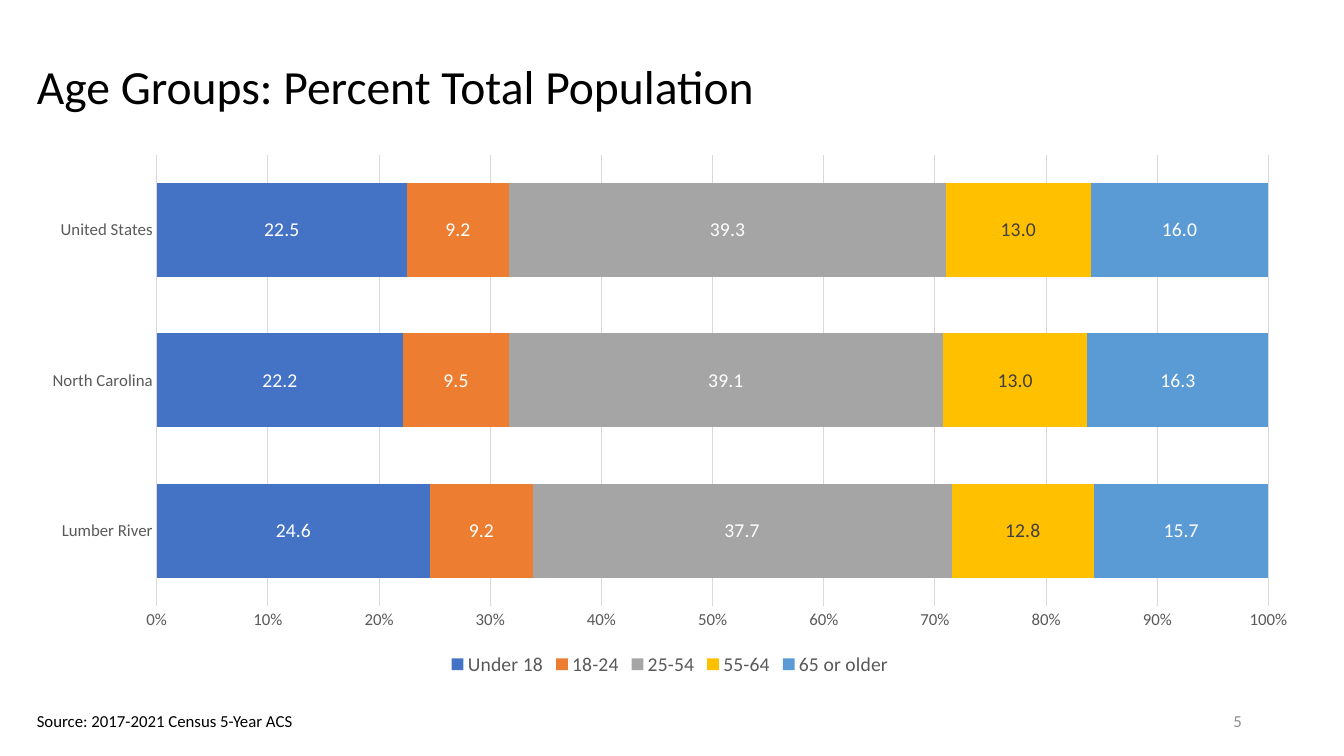
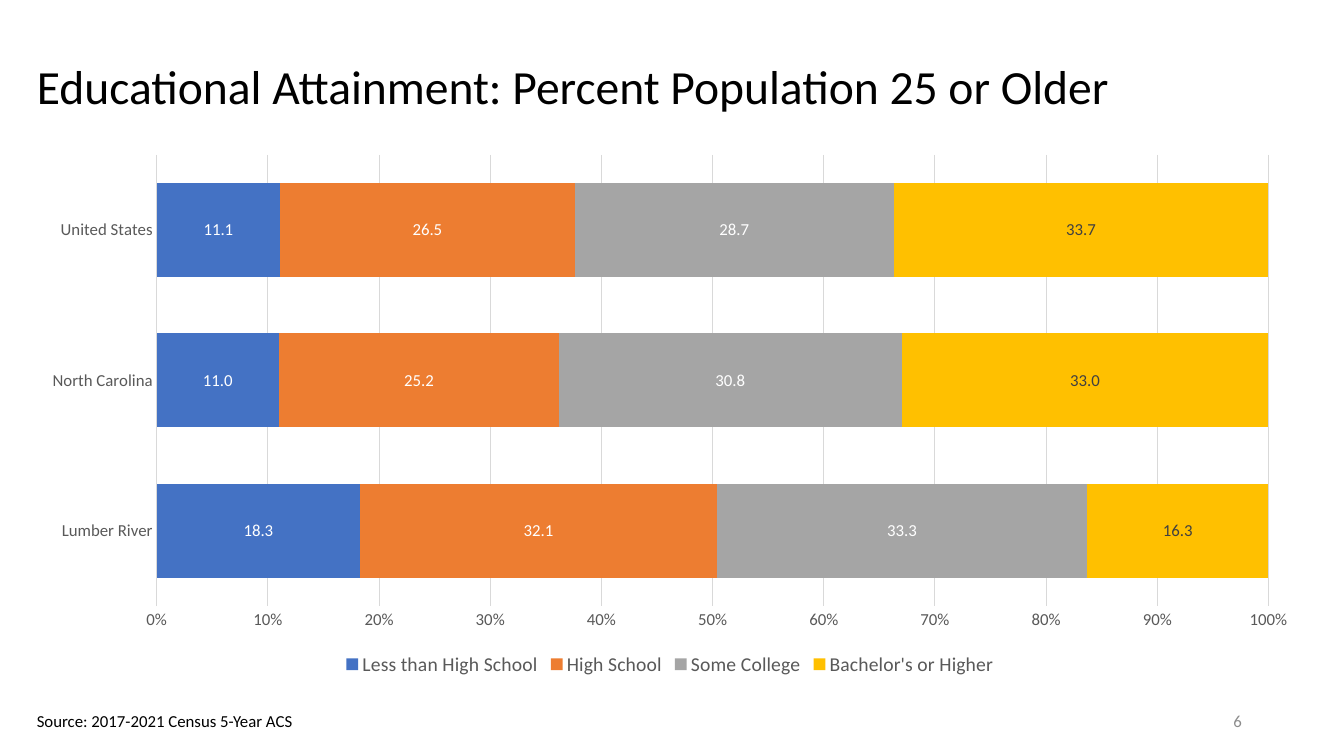
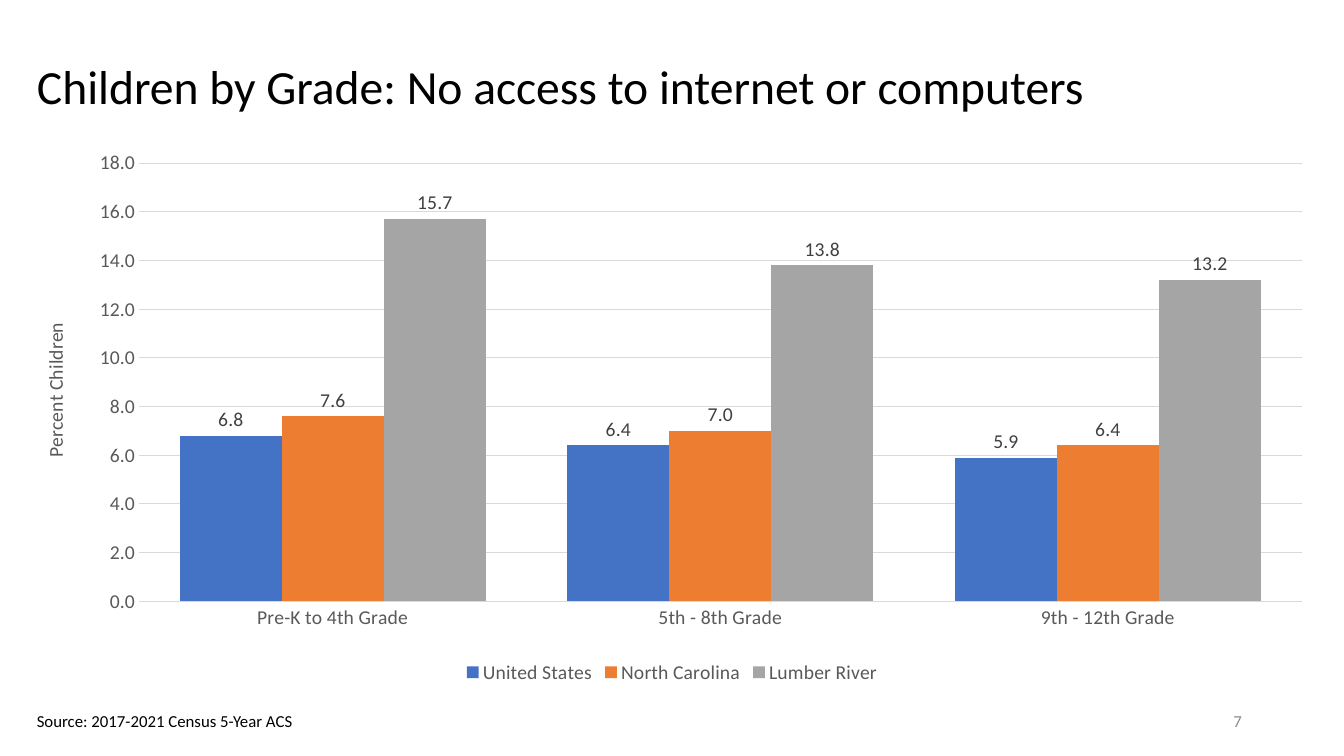
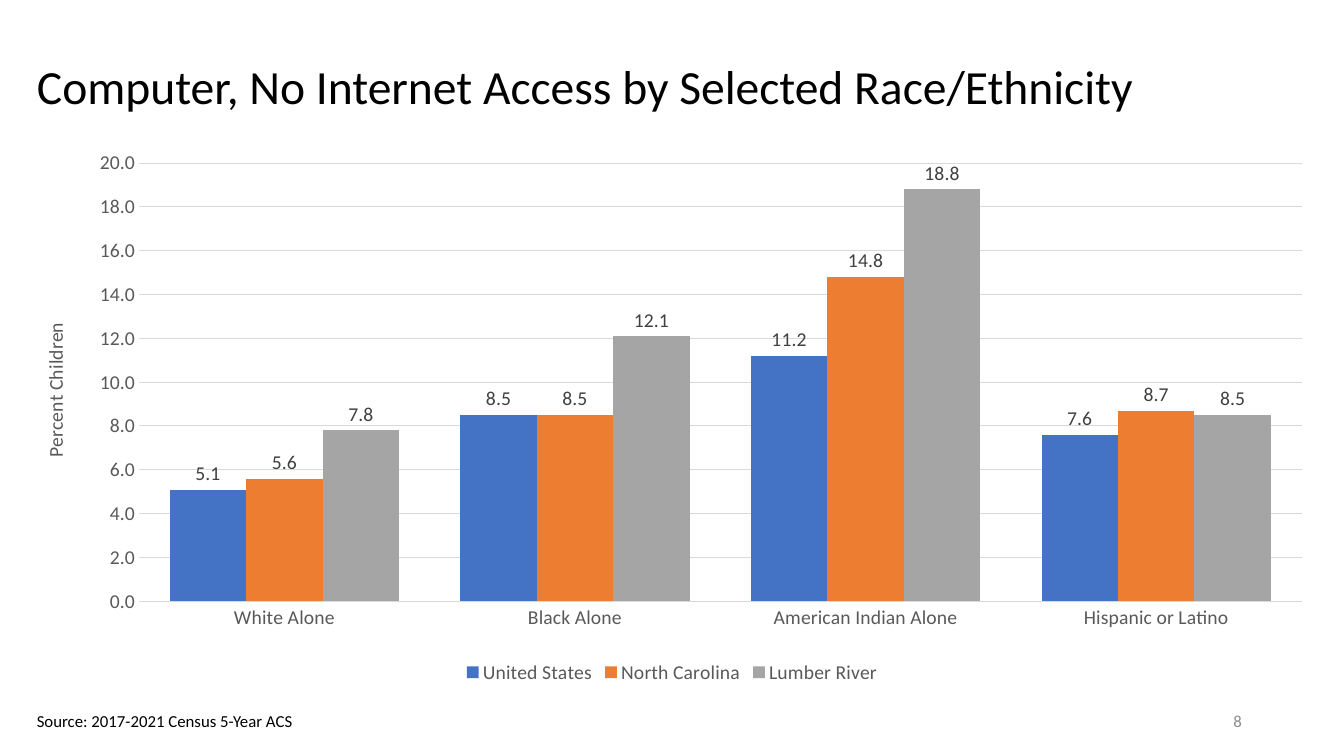
import pptx
import pptx.chart.data
import pptx.dml.color
import pptx.enum.chart
import pptx.enum.text
import pptx.oxml
import pptx.oxml.ns
import pptx.util

COLORS = {
    "black": "000000", "page number": "8C8C8C", "axis": "595959",
    "label": "404040", "rule": "D9D9D9", "white": "FFFFFF",
    "blue": "4472C4", "orange": "ED7D31", "gray": "A5A5A5",
    "gold": "FFC000", "sky": "5B9BD5",
}
SERIES_COLORS = ["blue", "orange", "gray", "gold", "sky"]
FONT = "Calibri"
NUMBER_FORMAT = "#,##0.0"
REGIONS = ["United States", "North Carolina", "Lumber River"]
FIRST_PAGE = 5

PAGES = [
    {"title": "Age Groups: Percent Total Population",
     "stacked": True, "label size": 14, "categories": REGIONS[::-1],
     "series": {"Under 18": (24.6, 22.2, 22.5), "18-24": (9.2, 9.5, 9.2),
                "25-54": (37.7, 39.1, 39.3), "55-64": (12.8, 13.0, 13.0),
                "65 or older": (15.7, 16.3, 16.0)}},
    {"title": "Educational Attainment: Percent Population 25 or Older",
     "stacked": True, "label size": 12, "categories": REGIONS[::-1],
     "series": {"Less than High School": (18.3, 11.0, 11.1),
                "High School": (32.1, 25.2, 26.5),
                "Some College": (33.3, 30.8, 28.7),
                "Bachelor's or Higher": (16.3, 33.0, 33.7)}},
    {"title": "Children by Grade: No access to internet or computers",
     "stacked": False, "label size": 14, "maximum": 18,
     "categories": ["Pre-K to 4th Grade", "5th - 8th Grade", "9th - 12th Grade"],
     "series": dict(zip(REGIONS, [(6.8, 6.4, 5.9), (7.6, 7.0, 6.4),
                                  (15.7, 13.8, 13.2)]))},
    {"title": "Computer, No Internet Access by Selected Race/Ethnicity",
     "stacked": False, "label size": 14, "maximum": 20,
     "categories": ["White Alone", "Black Alone", "American Indian Alone",
                    "Hispanic or Latino"],
     "series": dict(zip(REGIONS, [(5.1, 8.5, 11.2, 7.6), (5.6, 8.5, 14.8, 8.7),
                                  (7.8, 12.1, 18.8, 8.5)]))},
]

deck = pptx.Presentation()
deck.slide_width = pptx.util.Inches(13.33)
deck.slide_height = pptx.util.Inches(7.5)
COLUMN = deck.slide_width / 50
ROW = deck.slide_height / 30


def cells(left, top, width, height):
    """Turn grid columns and rows into a position and a size."""
    return [round(left * COLUMN), round(top * ROW),
            round(width * COLUMN), round(height * ROW)]


def style(font, size, color):
    font.name = FONT
    font.size = pptx.util.Pt(size)
    font.bold = False
    font.color.rgb = pptx.dml.color.RGBColor.from_string(COLORS[color])


for number, content in enumerate(PAGES, FIRST_PAGE):
    page = deck.slides.add_slide(deck.slide_layouts[5])
    title = page.shapes.title
    title.left, title.top, title.width, title.height = cells(1, 1.35, 47.85, 4.35)
    title.text_frame.text = content["title"]
    title.text_frame.auto_size = pptx.enum.text.MSO_AUTO_SIZE.NONE
    title.text_frame.vertical_anchor = pptx.enum.text.MSO_ANCHOR.MIDDLE
    para = title.text_frame.paragraphs[0]
    para.alignment = pptx.enum.text.PP_ALIGN.LEFT
    para.line_spacing = 0.9
    style(para.runs[0].font, 34, "black")

    box = page.shapes.add_textbox(*cells(35.32, 27.8, 11.25, 1.6))
    box.text_frame.text = str(number)
    box.text_frame.word_wrap = True
    box.text_frame.vertical_anchor = pptx.enum.text.MSO_ANCHOR.MIDDLE
    para = box.text_frame.paragraphs[0]
    para.alignment = pptx.enum.text.PP_ALIGN.RIGHT
    style(para.runs[0].font, 12, "page number")

    box = page.shapes.add_textbox(*cells(1, 28, 10.42, 1.2))
    box.text_frame.text = "Source: 2017-2021 Census 5-Year ACS"
    box.text_frame.word_wrap = False
    box.text_frame.auto_size = pptx.enum.text.MSO_AUTO_SIZE.SHAPE_TO_FIT_TEXT
    style(box.text_frame.paragraphs[0].runs[0].font, 12, "black")

    stacked = content["stacked"]
    chart_types = pptx.enum.chart.XL_CHART_TYPE
    data = pptx.chart.data.CategoryChartData(number_format=NUMBER_FORMAT)
    data.categories = content["categories"]
    for name, values in content["series"].items():
        data.add_series(name, values)
    if stacked:
        kind, area, axis_size = chart_types.BAR_STACKED_100, (1, 5.72, 47.85, 21.28), 12
    else:
        kind, area, axis_size = chart_types.COLUMN_CLUSTERED, (1, 5.72, 48, 21.6), 14
    chart = page.shapes.add_chart(kind, *cells(*area), data).chart
    chart.has_title = False
    style(chart.font, axis_size, "black")
    chart.has_legend = True
    chart.legend.position = pptx.enum.chart.XL_LEGEND_POSITION.BOTTOM
    chart.legend.include_in_layout = False
    style(chart.legend.font, 14, "axis")

    for axis in (chart.category_axis, chart.value_axis):
        axis.major_tick_mark = pptx.enum.chart.XL_TICK_MARK.NONE
        axis.minor_tick_mark = pptx.enum.chart.XL_TICK_MARK.NONE
        style(axis.tick_labels.font, axis_size, "axis")
    value_axis = chart.value_axis
    value_axis.has_major_gridlines = True
    value_axis.format.line.fill.background()
    for line in (chart.category_axis.format.line, value_axis.major_gridlines.format.line):
        line.width = pptx.util.Pt(0.75)
        line.color.rgb = pptx.dml.color.RGBColor.from_string(COLORS["rule"])
    value_axis.tick_labels.number_format = "0%" if stacked else NUMBER_FORMAT
    value_axis.tick_labels.number_format_is_linked = False

    plot = chart.plots[0]
    plot.vary_by_categories = False
    plot.gap_width = 60 if stacked else 80
    plot.overlap = 100 if stacked else 0
    for series, color in zip(plot.series, SERIES_COLORS):
        series.format.fill.solid()
        series.format.fill.fore_color.rgb = pptx.dml.color.RGBColor.from_string(COLORS[color])
        labels = series.data_labels
        labels.show_value = True
        labels.number_format = NUMBER_FORMAT
        labels.number_format_is_linked = False
        positions = pptx.enum.chart.XL_LABEL_POSITION
        labels.position = positions.CENTER if stacked else positions.OUTSIDE_END
        on_dark = stacked and color != "gold"
        style(labels.font, content["label size"], "white" if on_dark else "label")

    if not stacked:
        value_axis.minimum_scale = 0
        value_axis.maximum_scale = content["maximum"]
        value_axis.major_unit = 2
        axis_title = value_axis.axis_title
        axis_title.text_frame.text = "Percent Children"
        style(axis_title.text_frame.paragraphs[0].runs[0].font, 14, "axis")
        body = axis_title.element.find(".//" + pptx.oxml.ns.qn("a:bodyPr"))
        body.set("rot", "-5400000")
        body.set("vert", "horz")

        plot_area = chart.element.find(".//" + pptx.oxml.ns.qn("c:plotArea"))
        for layout in plot_area.findall(pptx.oxml.ns.qn("c:layout")):
            plot_area.remove(layout)
        plot_area.insert(0, pptx.oxml.parse_xml(
            f'<c:layout {pptx.oxml.ns.nsdecls("c")}><c:manualLayout>'
            '<c:layoutTarget val="inner"/><c:xMode val="edge"/><c:yMode val="edge"/>'
            '<c:x val="0.087"/><c:y val="0.035"/><c:w val="0.901"/><c:h val="0.805"/>'
            '</c:manualLayout></c:layout>'))

deck.save("out.pptx")
